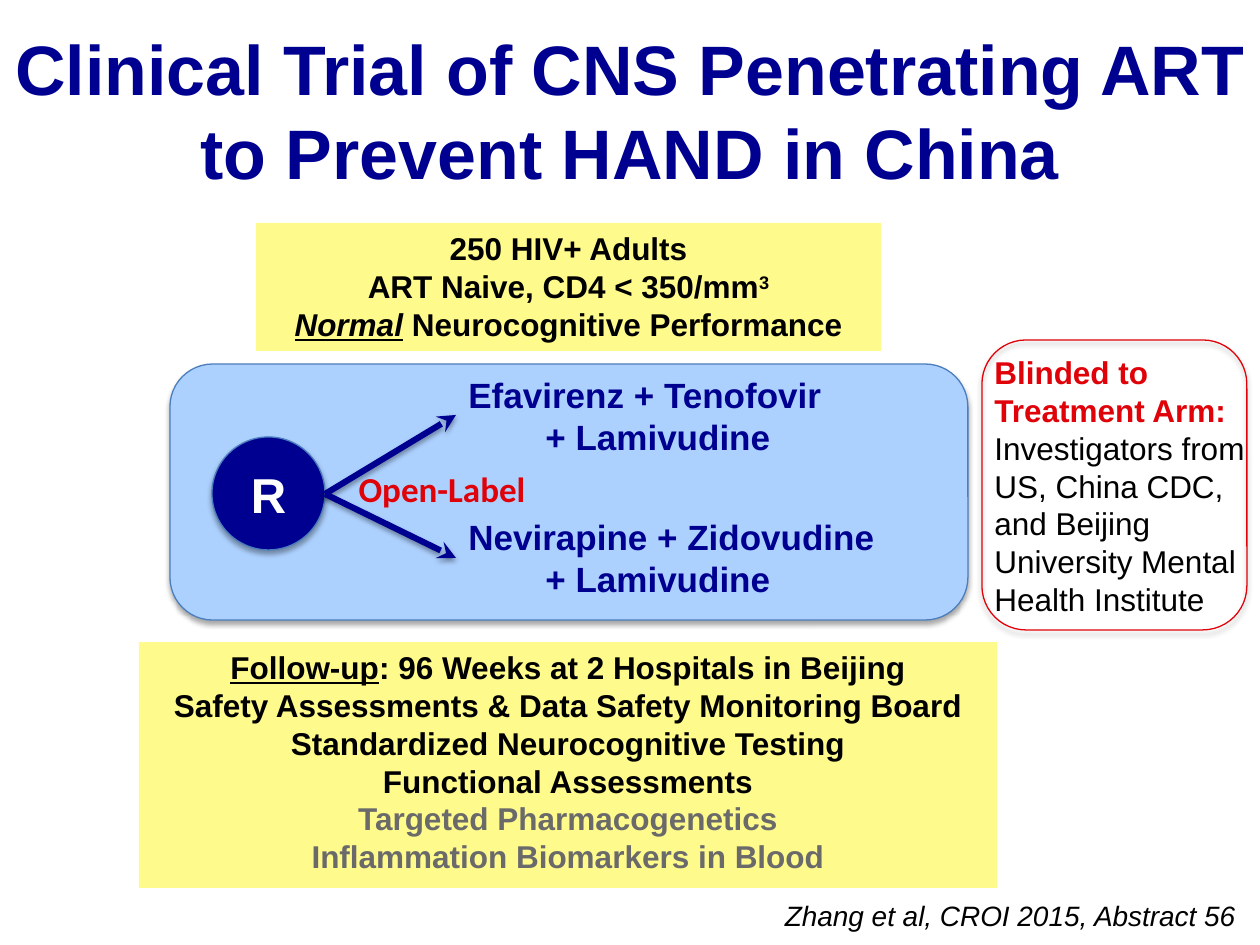
from pptx import Presentation
from pptx.dml.color import RGBColor as RGB
from pptx.enum.shapes import MSO_CONNECTOR as LINE, MSO_SHAPE as SHAPE
from pptx.enum.text import MSO_ANCHOR as ANCHOR, PP_ALIGN as ALIGN
from pptx.oxml import parse_xml
from pptx.oxml.ns import nsdecls
from pptx.oxml.xmlchemy import OxmlElement
from pptx.util import Pt

PX = 914400 // 126
COLORS = {"navy": "000090", "sky": "ADD1FF", "edge": "4B7EBC", "yellow": "FFFA8C",
          "red": "DF0209", "gray": "6A6A6A", "black": "000000", "white": "FFFFFF"}


def write(shape, paragraphs, size, color="black", align=ALIGN.CENTER, font="Arial", bold=True):
    """Each paragraph is a list of (text, run settings) pairs."""
    frame = shape.text_frame
    frame.word_wrap = True
    for i, pieces in enumerate(paragraphs):
        paragraph = frame.paragraphs[0] if i == 0 else frame.add_paragraph()
        paragraph.alignment = align
        for text, settings in pieces:
            run = paragraph.add_run()
            run.text = text
            run.font.name, run.font.size = font, Pt(size)
            run.font.bold = settings.get("bold", bold)
            run.font.italic = settings.get("italic", False)
            run.font.underline = settings.get("underline", False)
            run.font.color.rgb = RGB.from_string(COLORS[settings.get("color", color)])
            if settings.get("superscript"):
                run.font._element.set("baseline", "30000")
    return frame


def add_shadow(shape, alpha=35, distance=1.8):
    shape._element.spPr.append(parse_xml(
        f'<a:effectLst {nsdecls("a")}><a:outerShdw blurRad="{Pt(3.1)}" dist="{Pt(distance)}" '
        f'dir="5400000" rotWithShape="0"><a:srgbClr val="{COLORS["black"]}">'
        f'<a:alpha val="{alpha * 1000}"/></a:srgbClr></a:outerShdw></a:effectLst>'))


prs = Presentation()
prs.slide_width, prs.slide_height = 1260 * PX, 945 * PX
shapes = prs.slides.add_slide(prs.slide_layouts[6]).shapes

# Title
title = shapes.add_textbox(0, 30 * PX, 1260 * PX, 158 * PX)
write(title, [[("Clinical Trial of CNS Penetrating ART to Prevent HAND in China", {})]],
      40, "navy").vertical_anchor = ANCHOR.MIDDLE

# Trial panel, randomization circle and frame of the blinding note
outlined = [
    (SHAPE.ROUNDED_RECTANGLE, 170, 364, 798, 256, "sky", "edge", ""),
    (SHAPE.OVAL, 212, 437, 113, 113, "navy", "edge", "R"),
    (SHAPE.ROUNDED_RECTANGLE, 982, 340, 265, 290, None, "red", ""),
]
for kind, x, y, w, h, fill, edge, label in outlined:
    part = shapes.add_shape(kind, x * PX, y * PX, w * PX, h * PX)
    if fill:
        part.fill.solid()
        part.fill.fore_color.rgb = RGB.from_string(COLORS[fill])
    else:
        part.fill.background()
    part.line.color.rgb = RGB.from_string(COLORS[edge])
    part.line.width = Pt(0.75)
    add_shadow(part)
    if label:
        write(part, [[(label, {})]], 28, "white").vertical_anchor = ANCHOR.MIDDLE

# Treatment arms, each with its arrow
arms = [("Efavirenz + Tenofovir", 367, 415), ("Nevirapine + Zidovudine", 509, 558)]
for drugs, top, tip in arms:
    arrow = shapes.add_connector(LINE.STRAIGHT, 325 * PX, 494 * PX, 456 * PX, tip * PX)
    arrow.line.color.rgb = RGB.from_string(COLORS["navy"])
    arrow.line.width = Pt(3.5)
    head = OxmlElement("a:tailEnd")
    head.set("type", "stealth")
    arrow.line._get_or_add_ln().append(head)
    add_shadow(arrow, 38, 1.6)

    arm = shapes.add_textbox(456 * PX, top * PX, 435 * PX, 97 * PX)
    frame = write(arm, [[(drugs, {})], [("+ Lamivudine", {})]], 20, "navy", ALIGN.LEFT)
    frame.paragraphs[1]._p.get_or_add_pPr().set("marL", str(77 * PX))

open_label = shapes.add_textbox(345 * PX, 467 * PX, 194 * PX, 43 * PX)
frame = write(open_label, [[("Open-Label", {})]], 20, "red", font="Calibri")
frame.margin_top = frame.margin_bottom = 0

# Yellow boxes: who is enrolled and how they are followed
enrolled = [
    [("250 HIV+ Adults", {})],
    [("ART Naive, CD4 < 350/mm", {}), ("3", {"superscript": True})],
    [("Normal", {"italic": True, "underline": True}), (" Neurocognitive Performance", {})],
]
follow_up = [
    [("Follow-up", {"underline": True}), (": 96 Weeks at 2 Hospitals in Beijing", {})],
    [("Safety Assessments & Data Safety Monitoring Board", {})],
    [("Standardized Neurocognitive Testing", {})],
    [("Functional Assessments", {})],
    [("Targeted Pharmacogenetics", {"color": "gray"})],
    [("Inflammation Biomarkers in Blood", {"color": "gray"})],
]
for x, y, w, h, lines in [(256, 223, 625, 128, enrolled), (139, 642, 858, 246, follow_up)]:
    box = shapes.add_shape(SHAPE.RECTANGLE, x * PX, y * PX, w * PX, h * PX)
    box.shadow.inherit = False
    box.fill.solid()
    box.fill.fore_color.rgb = RGB.from_string(COLORS["yellow"])
    box.line.fill.background()
    write(box, lines, 18).vertical_anchor = ANCHOR.TOP

# Blinding note
blinded = shapes.add_textbox(982 * PX, 347 * PX, 282 * PX, 290 * PX)
write(blinded, [[
    ("Blinded to Treatment Arm: ", {"color": "red", "bold": True}),
    ("Investigators from US, China CDC, and Beijing University Mental Health Institute", {}),
]], 18, align=ALIGN.LEFT, bold=False)

# Citation
citation = shapes.add_textbox(760 * PX, 892 * PX, 488 * PX, 47 * PX)
write(citation, [[("Zhang et al, CROI 2015, Abstract 56", {"italic": True})]],
      16, align=ALIGN.RIGHT, bold=False)

prs.save("out.pptx")
